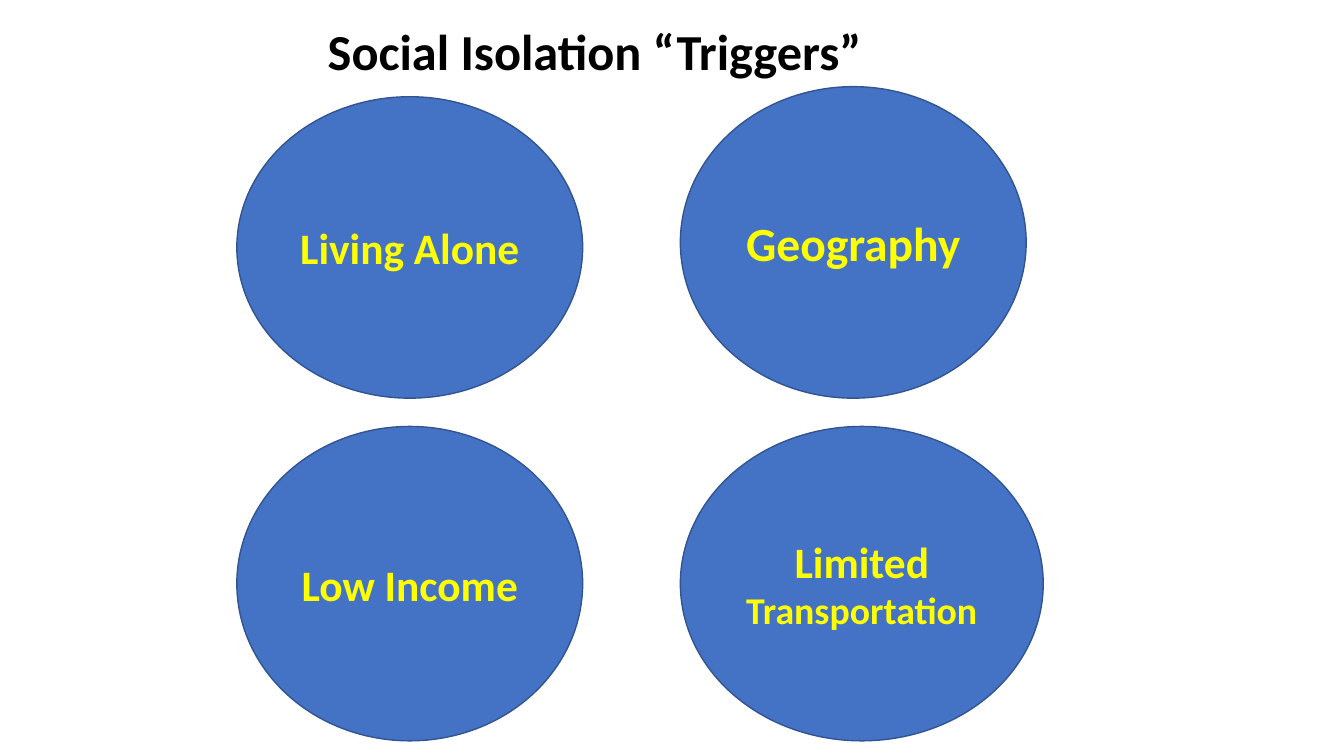
from dataclasses import dataclass

from pptx import Presentation
from pptx.dml.color import RGBColor
from pptx.enum.shapes import MSO_SHAPE as Preset
from pptx.enum.text import MSO_ANCHOR as Anchor, PP_ALIGN as Align
from pptx.util import Pt


@dataclass(frozen=True)
class Theme:
    font: str = "Calibri"
    circle_fill: RGBColor = RGBColor(0x44, 0x72, 0xC4)
    circle_line: RGBColor = RGBColor(0x32, 0x54, 0x91)
    trigger_text: RGBColor = RGBColor(0xFF, 0xFF, 0x00)
    title_text: RGBColor = RGBColor(0x00, 0x00, 0x00)
    title_size: int = 36
    large_size: int = 34
    medium_size: int = 31
    small_size: int = 27


THEME = Theme()

# Layout in points: circles share column lefts and row bottoms
LEFT_COLUMN, RIGHT_COLUMN = 169.2, 486
UPPER_BOTTOM, LOWER_BOTTOM = 284.4, 529.2
CIRCLE_WIDTH, WIDE_CIRCLE_WIDTH = 247, 259.2

# Each trigger: left, bottom, width, height, wording with type sizes
TRIGGERS = [
    (RIGHT_COLUMN, UPPER_BOTTOM, CIRCLE_WIDTH, 222.5,
     [("Geography", THEME.large_size)]),
    (LEFT_COLUMN, LOWER_BOTTOM, CIRCLE_WIDTH, 224.6,
     [("Low Income", THEME.medium_size)]),
    (RIGHT_COLUMN, LOWER_BOTTOM, WIDE_CIRCLE_WIDTH, 224.6,
     [("Limited ", THEME.medium_size), ("Transportation", THEME.small_size)]),
    (LEFT_COLUMN, UPPER_BOTTOM, CIRCLE_WIDTH, 215.3,
     [("Living Alone", THEME.medium_size)]),
]


def write_centered(frame, wording, color):
    """Fill one centred paragraph with bold pieces of (text, size)."""
    frame.word_wrap = True
    line = frame.paragraphs[0]
    line.alignment = Align.CENTER
    for text, size in wording:
        piece = line.add_run()
        piece.text = text
        piece.font.name = THEME.font
        piece.font.size = Pt(size)
        piece.font.bold = True
        piece.font.color.rgb = color


def add_title(slide, text):
    title = slide.shapes.add_textbox(Pt(226.8), Pt(10.8), Pt(411.1), Pt(61.2))
    # A wider right inset sets the heading slightly left of centre
    title.text_frame.margin_right = Pt(22)
    write_centered(title.text_frame, [(text, THEME.title_size)], THEME.title_text)


def add_trigger(slide, left, bottom, width, height, wording):
    circle = slide.shapes.add_shape(
        Preset.FLOWCHART_CONNECTOR,
        Pt(left), Pt(bottom - height), Pt(width), Pt(height))
    circle.shadow.inherit = False
    circle.fill.solid()
    circle.fill.fore_color.rgb = THEME.circle_fill
    circle.line.color.rgb = THEME.circle_line
    circle.line.width = Pt(1)
    circle.text_frame.vertical_anchor = Anchor.MIDDLE
    write_centered(circle.text_frame, wording, THEME.trigger_text)


def main():
    deck = Presentation()
    deck.slide_width, deck.slide_height = Pt(960), Pt(540)
    slide = deck.slides.add_slide(deck.slide_layouts[6])

    # Heading
    add_title(slide, "Social Isolation “Triggers”")

    # Four triggers
    for trigger in TRIGGERS:
        add_trigger(slide, *trigger)

    deck.save("out.pptx")


if __name__ == "__main__":
    main()
